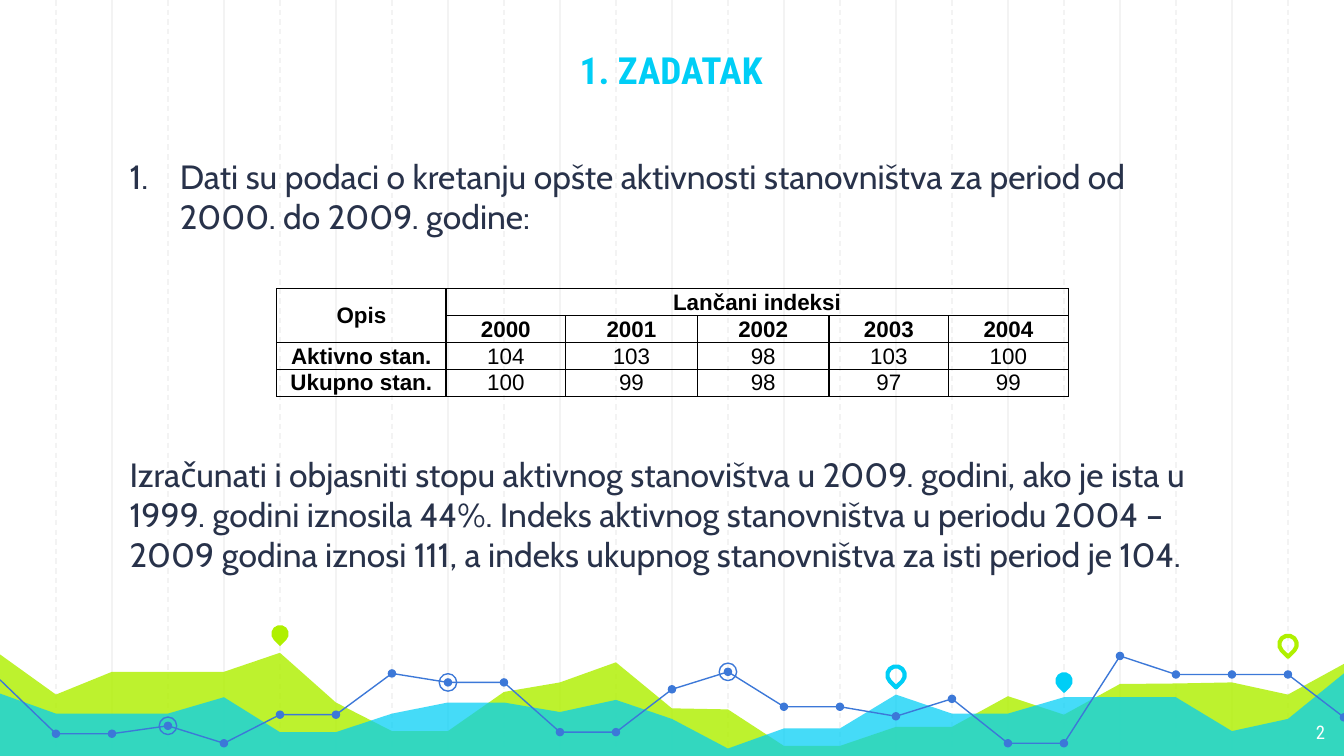
from lxml import etree
from pptx import Presentation
from pptx.dml.color import RGBColor
from pptx.enum.dml import MSO_LINE
from pptx.enum.shapes import MSO_CONNECTOR, MSO_SHAPE
from pptx.enum.text import MSO_ANCHOR, PP_ALIGN
from pptx.oxml.ns import qn
from pptx.util import Cm, Pt

LEFT, CENTER, RIGHT = PP_ALIGN.LEFT, PP_ALIGN.CENTER, PP_ALIGN.RIGHT
TOP, MIDDLE, BOTTOM = MSO_ANCHOR.TOP, MSO_ANCHOR.MIDDLE, MSO_ANCHOR.BOTTOM
OVAL, PIN = MSO_SHAPE.OVAL, MSO_SHAPE.TEAR
STRAIGHT, DASH = MSO_CONNECTOR.STRAIGHT, MSO_LINE.DASH

THEME = {
    "green": "AFF000", "cyan": "00CEF6", "blue": "3C78D8", "grid": "F3F3F3",
    "ink": "28324A", "white": "FFFFFF", "black": "000000",
    "thin": Pt(0.75), "thick": Pt(2.25),
    "title": {"name": "Roboto Condensed", "size": Pt(20), "bold": True},
    "body": {"name": "Cabin", "size": Pt(18), "bold": False},
    "number": {"name": "Roboto Condensed", "size": Pt(10), "bold": False},
    "head": {"name": "Arial", "size": Pt(12), "bold": True},
    "cell": {"name": "Arial", "size": Pt(12), "bold": False},
}

# Content (lengths in centimetres)
TITLE = "1. ZADATAK"
TASK = ("Dati su podaci o kretanju opšte aktivnosti stanovništva za period "
        "od 2000. do 2009. godine:")
QUESTION = ("Izračunati i objasniti stopu aktivnog stanovištva u 2009. godini, "
            "ako je ista u 1999. godini iznosila 44%. Indeks aktivnog "
            "stanovništva u periodu 2004 – 2009 godina iznosi 111, a indeks "
            "ukupnog stanovništva za isti period je 104.")
PAGE_NUMBER = "2"
TABLE = [
    ["Opis", "Lančani indeksi", "", "", "", ""],
    ["", "2000", "2001", "2002", "2003", "2004"],
    ["Aktivno stan.", "104", "103", "98", "103", "100"],
    ["Ukupno stan.", "100", "99", "98", "97", "99"],
]
TABLE_COLUMNS = [3.2, 2.26, 2.49, 2.49, 2.26, 2.26]
ROW_HEIGHT = 0.48

# One height for each grid column, from the left edge to the right edge
WIDTH, HEIGHT, COLUMNS = 25.4, 14.29, 24
AREAS = [
    ("green", 82, [12.37, 13.13, 12.7, 12.7, 12.7, 12.34, 13.28, 13.82, 13.82,
                   13.08, 12.9, 12.52, 13.39, 13.41, 14.1, 14.1, 13.74, 13.74,
                   13.16, 13.51, 12.93, 12.92, 12.9, 13.13, 12.55]),
    ("cyan", 73, [13.11, 13.49, 13.49, 13.49, 13.18, 13.84, 13.84, 13.49, 13.28,
                  13.28, 13.46, 13.23, 13.59, 14.15, 13.77, 13.77, 13.13, 13.49,
                  13.49, 13.18, 13.18, 13.18, 13.82, 13.59, 12.73]),
]
TREND = [12.85, 13.87, 13.87, 13.72, 14.05, 13.51, 13.51, 12.73, 12.9, 12.9,
         13.84, 13.84, 13.03, 12.7, 13.36, 13.36, 13.54, 13.21, 14.05, 14.05,
         12.4, 12.75, 12.75, 12.75, 13.56]
TREND_PARTS = [(0, 11), (11, 20), (20, 24)]
RINGED = [3, 8, 13]
# column, height, colour, filled
PINS = [(5, 11.98, "green", True), (16, 12.76, "cyan", False),
        (19, 12.87, "cyan", True), (23, 12.18, "green", False)]
DOT, MARK = 0.16, 0.33


def color(name):
    return RGBColor.from_string(THEME[name])


def column_x(column):
    return column * WIDTH / COLUMNS


def put(target, values):
    for name, value in values.items():
        setattr(target, name, value)


def paint(shape, fill=None, line=None, width=THEME["thin"], alpha=None):
    shape.shadow.inherit = False
    if fill:
        shape.fill.solid()
        shape.fill.fore_color.rgb = color(fill)
        if alpha:
            tint = shape.fill._xPr.find(".//" + qn("a:srgbClr"))
            etree.SubElement(tint, qn("a:alpha"), val=str(alpha * 1000))
    else:
        shape.fill.background()
    if line:
        shape.line.color.rgb = color(line)
        shape.line.width = width
    else:
        shape.line.fill.background()


def add_outline(points, close):
    points = [(Cm(x), Cm(y)) for x, y in points]
    builder = page.shapes.build_freeform(*points[0])
    builder.add_line_segments(points[1:], close=close)
    return builder.convert_to_shape()


def add_mark(kind, x, y, size):
    return page.shapes.add_shape(kind, Cm(x - size / 2), Cm(y - size / 2),
                                 Cm(size), Cm(size))


def write(para, text, style, tone, **layout):
    put(para, layout)
    span = para.add_run()
    span.text = text
    put(span.font, THEME[style])
    span.font.color.rgb = color(tone)


def add_box(left, top, width, height, anchor):
    frame = page.shapes.add_textbox(Cm(left), Cm(top), Cm(width), Cm(height)).text_frame
    inset = Cm(0.25)
    put(frame, {"word_wrap": True, "vertical_anchor": anchor, "margin_left": inset,
                "margin_right": inset, "margin_top": inset, "margin_bottom": inset})
    return frame


def indent(para, left, first):
    props = para._p.get_or_add_pPr()
    props.set("marL", str(Cm(left)))
    props.set("indent", str(Cm(first)))
    return props


def add_borders(cell):
    props = cell._tc.get_or_add_tcPr()
    for place, side in enumerate(("lnL", "lnR", "lnT", "lnB")):
        edge = etree.Element(qn("a:" + side), w=str(THEME["thin"]))
        solid = etree.SubElement(edge, qn("a:solidFill"))
        etree.SubElement(solid, qn("a:srgbClr"), val=THEME["black"])
        props.insert(place, edge)


deck = Presentation()
put(deck, {"slide_width": Cm(WIDTH), "slide_height": Cm(HEIGHT)})
page = deck.slides.add_slide(deck.slide_layouts[6])

# Vertical grid: solid on even columns, dashed on odd ones
for column in [*range(2, COLUMNS, 2), *range(1, COLUMNS, 2)]:
    x = Cm(column_x(column))
    rule = page.shapes.add_connector(STRAIGHT, x, 0, x, Cm(14.35))
    rule.line.color.rgb = color("grid")
    rule.line.width = THEME["thin"]
    if column % 2:
        rule.line.dash_style = DASH
    etree.SubElement(rule._element.spPr, qn("a:effectLst"))

# Hills
for tone, alpha, heights in AREAS:
    ridge = [(column_x(i), y) for i, y in enumerate(heights)]
    hill = add_outline(ridge + [(WIDTH, 14.33), (0, 14.33)], True)
    paint(hill, fill=tone, alpha=alpha)

# Map pins
for column, y, tone, filled in PINS:
    pin = add_mark(PIN, column_x(column), y, MARK)
    pin.rotation = 135
    if filled:
        paint(pin, fill=tone)
    else:
        paint(pin, line=tone, width=THEME["thick"])

# Trend line with dots and rings
trend_points = [(column_x(i), y) for i, y in enumerate(TREND)]
for first, last in TREND_PARTS:
    paint(add_outline(trend_points[first:last + 1], False), line="blue")
for x, y in trend_points[1:]:
    paint(add_mark(OVAL, x, y, DOT), fill="blue")
for column in RINGED:
    paint(add_mark(OVAL, *trend_points[column], MARK), line="blue")

# Page number, title and body
frame = add_box(23.77, 13.41, 1.52, 0.89, TOP)
write(frame.paragraphs[0], PAGE_NUMBER, "number", "white", alignment=RIGHT)

frame = add_box(2.97, 0, 19.43, 1.98, BOTTOM)
write(frame.paragraphs[0], TITLE, "title", "cyan", alignment=CENTER)

frame = add_box(1.88, 2.69, 21.59, 8.46, TOP)
para = frame.paragraphs[0]
write(para, TASK, "body", "ink", alignment=LEFT, space_before=Pt(6))
numbering = indent(para, 1.27, -0.95)
etree.SubElement(numbering, qn("a:buAutoNum"), type="arabicPeriod")
para = frame.add_paragraph()
write(para, QUESTION, "body", "ink", alignment=LEFT, space_before=Pt(116.5))
indent(para, 0.32, 0)

# Index table
grid = page.shapes.add_table(len(TABLE), len(TABLE_COLUMNS), Cm(5.23), Cm(5.46),
                             Cm(sum(TABLE_COLUMNS)), Cm(ROW_HEIGHT * len(TABLE))).table
put(grid, {"first_row": False, "horz_banding": False})
for column, width in zip(grid.columns, TABLE_COLUMNS):
    column.width = Cm(width)
for r, values in enumerate(TABLE):
    grid.rows[r].height = Cm(ROW_HEIGHT)
    for c, value in enumerate(values):
        cell = grid.cell(r, c)
        put(cell, {"margin_left": Cm(0.18), "margin_right": Cm(0.18), "margin_top": 0,
                   "margin_bottom": 0, "vertical_anchor": MIDDLE})
        cell.fill.background()
        add_borders(cell)
        if value:
            style = "head" if r < 2 or c == 0 else "cell"
            write(cell.text_frame.paragraphs[0], value, style, "black", alignment=CENTER)
grid.cell(0, 0).merge(grid.cell(1, 0))
grid.cell(0, 1).merge(grid.cell(0, 5))

deck.save("out.pptx")
